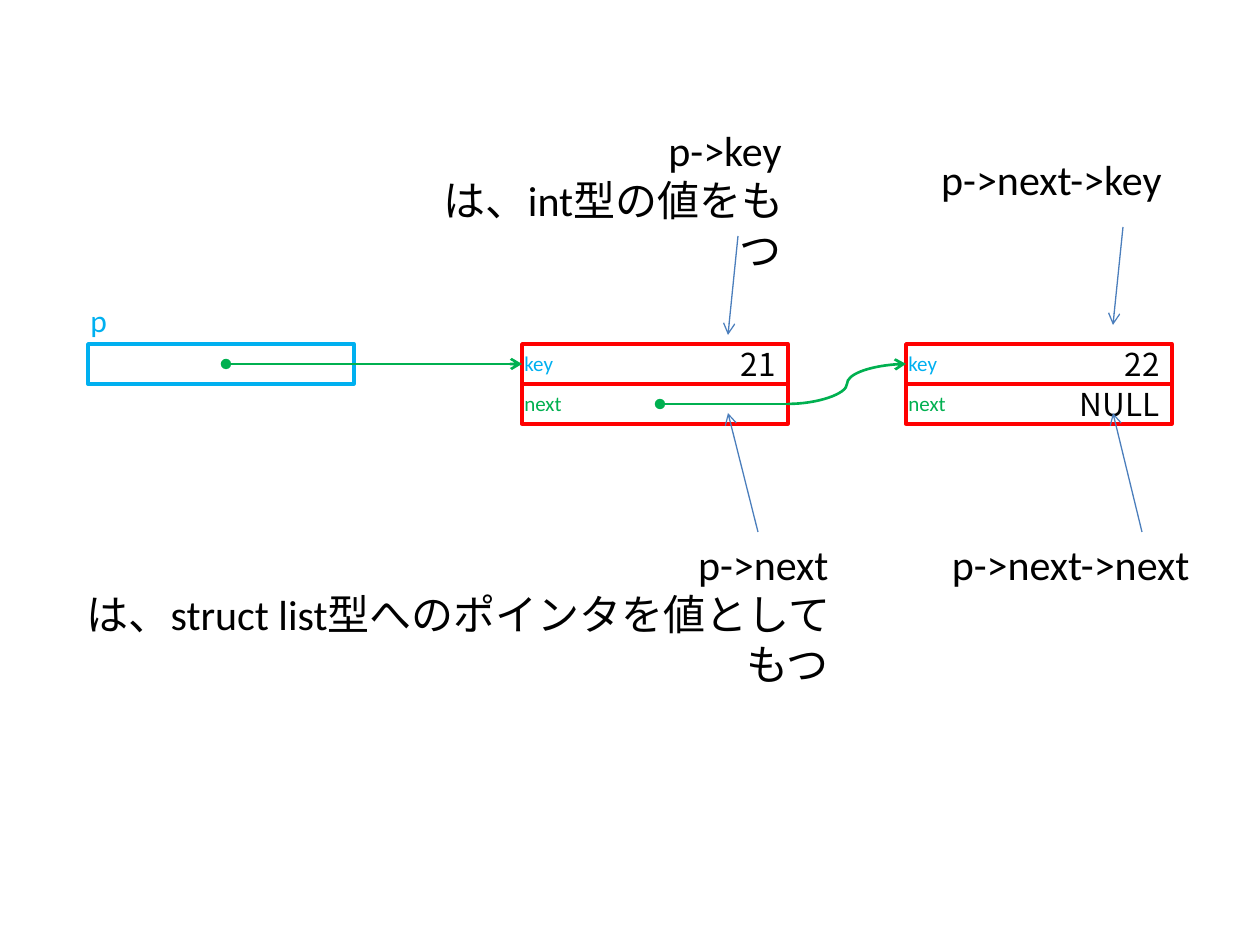
import dataclasses
import typing

import pptx
import pptx.dml.color
import pptx.enum.shapes
import pptx.enum.text
import pptx.oxml
import pptx.oxml.ns
import pptx.util

RGB = pptx.dml.color.RGBColor
RED = RGB(0xFF, 0x00, 0x00)
SKY = RGB(0x00, 0xB0, 0xF0)
GREEN = RGB(0x00, 0xB0, 0x50)
BLUE = RGB(0x4B, 0x7E, 0xBC)
BLACK = RGB(0x00, 0x00, 0x00)

LATIN = "Calibri"
JAPANESE = "Noto Sans CJK JP"
ALIGN = pptx.enum.text.PP_ALIGN
STRAIGHT = pptx.enum.shapes.MSO_CONNECTOR.STRAIGHT
CURVE = pptx.enum.shapes.MSO_CONNECTOR.CURVE

EMU_PER_PX = 914400 / 126
CELL_WIDTH = 266
CELL_HEIGHT = 40
CELL_TOP = 344
DOT_OFFSET = 138
POINTER_LEFT = 88


@dataclasses.dataclass(frozen=True)
class Node:
    left: int
    key: str
    next: str


@dataclasses.dataclass(frozen=True)
class Callout:
    lines: tuple[str, ...]
    box: tuple[int, int, int, int]
    start: tuple[int, int]
    end: tuple[int, int]


NODES = (Node(522, "21", ""), Node(906, "22", "NULL"))

CALLOUTS = (
    Callout(("p->key", "は、int型の値をもつ"), (413, 118, 381, 115), (738, 236), (728, 335)),
    Callout(("p->next", "は、struct list型へのポインタを値としてもつ"),
            (59, 532, 782, 115), (758, 532), (728, 413)),
    Callout(("p->next->key",), (925, 147, 249, 63), (1123, 227), (1113, 325)),
    Callout(("p->next->next",), (935, 532, 267, 63), (1142, 532), (1113, 413)),
)


def px(length: int) -> int:
    return round(length * EMU_PER_PX)


def write(frame: typing.Any, *lines: str, size: int, color: RGB,
          font: str = LATIN, align: ALIGN = ALIGN.LEFT) -> None:
    for index, line in enumerate(lines):
        paragraph = frame.add_paragraph() if index else frame.paragraphs[0]
        paragraph.alignment = align
        run = paragraph.add_run()
        run.text = line
        run.font.size = pptx.util.Pt(size)
        run.font.name = font
        run.font.color.rgb = color
        east_asian = pptx.oxml.parse_xml(
            f'<a:ea {pptx.oxml.ns.nsdecls("a")} typeface="{JAPANESE}"/>')
        run.font._element.find(pptx.oxml.ns.qn("a:latin")).addnext(east_asian)


def draw_cell(slide: typing.Any, left: int, top: int, color: RGB, value: str = "") -> None:
    cell = slide.shapes.add_shape(
        pptx.enum.shapes.MSO_SHAPE.RECTANGLE,
        px(left), px(top), px(CELL_WIDTH), px(CELL_HEIGHT))
    cell.shadow.inherit = False
    cell.fill.background()
    cell.line.color.rgb = color
    cell.line.width = pptx.util.Pt(2)
    if value:
        cell.text_frame.vertical_anchor = pptx.enum.text.MSO_ANCHOR.MIDDLE
        write(cell.text_frame, value, size=18, color=BLACK, font=JAPANESE, align=ALIGN.RIGHT)


def draw_label(slide: typing.Any, box: tuple[int, int, int, int], *lines: str,
               size: int, color: RGB, align: ALIGN = ALIGN.LEFT) -> None:
    frame = slide.shapes.add_textbox(*map(px, box)).text_frame
    frame.word_wrap = True
    frame.auto_size = pptx.enum.text.MSO_AUTO_SIZE.SHAPE_TO_FIT_TEXT
    write(frame, *lines, size=size, color=color, align=align)


def draw_line(slide: typing.Any, start: tuple[int, int], end: tuple[int, int], color: RGB,
              width: float, kind: typing.Any = STRAIGHT, head: str = "none",
              tail: str = "none") -> None:
    line = slide.shapes.add_connector(kind, *map(px, start + end))
    line.line.color.rgb = color
    line.line.width = pptx.util.Pt(width)
    namespace = pptx.oxml.ns.nsdecls("a")
    outline = line.line._get_or_add_ln()
    for tag, ending in (("headEnd", head), ("tailEnd", tail)):
        outline.append(pptx.oxml.parse_xml(f'<a:{tag} {namespace} type="{ending}"/>'))
    outline.addnext(pptx.oxml.parse_xml(f"<a:effectLst {namespace}/>"))


def draw_node(slide: typing.Any, node: Node) -> None:
    fields = (("key", node.key, SKY), ("next", node.next, GREEN))
    for row, (name, value, color) in enumerate(fields):
        top = CELL_TOP + row * CELL_HEIGHT
        draw_cell(slide, node.left, top, RED, value)
        draw_label(slide, (node.left - 10, top, 79, 38), name, size=12, color=color)


def draw_reference(slide: typing.Any, left: int, row: int, target: Node) -> None:
    middle = CELL_TOP + CELL_HEIGHT // 2
    y = middle + row * CELL_HEIGHT
    edge = (left + CELL_WIDTH, y)
    draw_line(slide, (left + DOT_OFFSET, y), edge, GREEN, 1.5, head="oval")
    draw_line(slide, edge, (target.left, middle), GREEN, 1.5, CURVE, tail="arrow")


def main() -> None:
    presentation = pptx.Presentation()
    presentation.slide_width = pptx.util.Inches(10)
    presentation.slide_height = pptx.util.Inches(7.5)
    slide = presentation.slides.add_slide(presentation.slide_layouts[6])

    first, second = NODES
    for node in NODES:
        draw_node(slide, node)
    draw_reference(slide, first.left, 1, second)

    draw_cell(slide, POINTER_LEFT, CELL_TOP, SKY)
    draw_label(slide, (POINTER_LEFT - 10, 295, 60, 50), "p", size=18, color=SKY)
    draw_reference(slide, POINTER_LEFT, 0, first)

    for callout in CALLOUTS:
        draw_label(slide, callout.box, *callout.lines, size=24, color=BLACK, align=ALIGN.RIGHT)
        draw_line(slide, callout.start, callout.end, BLUE, 0.75, tail="arrow")

    presentation.save("out.pptx")


if __name__ == "__main__":
    main()
